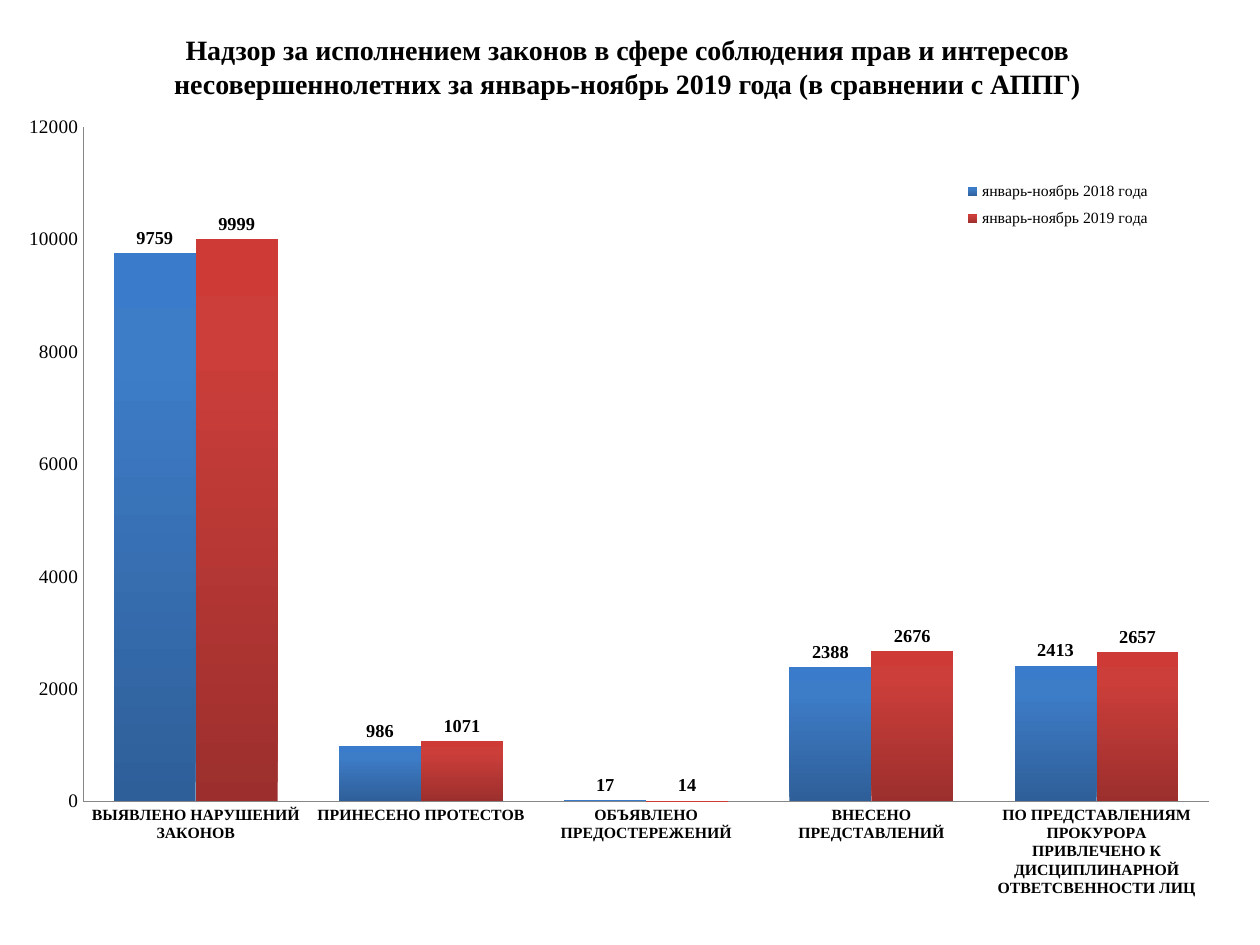
from copy import deepcopy

from lxml.etree import SubElement
from pptx import Presentation
from pptx.chart.data import CategoryChartData as Data
from pptx.dml.color import RGBColor
from pptx.enum.chart import XL_CHART_TYPE as Kind
from pptx.enum.chart import XL_LABEL_POSITION as Spot
from pptx.enum.chart import XL_LEGEND_POSITION as Side
from pptx.enum.chart import XL_TICK_MARK as Tick
from pptx.enum.text import PP_ALIGN as Align
from pptx.oxml import parse_xml
from pptx.oxml.ns import nsdecls, qn
from pptx.util import Inches, Pt

BLACK = RGBColor(0, 0, 0)
GRAY = RGBColor(0x86, 0x86, 0x86)
BLUES = [RGBColor(0x2F, 0x5F, 0x99), RGBColor(0x3D, 0x7C, 0xC7), RGBColor(0x3A, 0x7C, 0xCB)]
REDS = [RGBColor(0x9C, 0x2F, 0x2D), RGBColor(0xCB, 0x3E, 0x3A), RGBColor(0xCE, 0x3B, 0x37)]
STOPS = [0, 0.8, 1]
FACE = "Times New Roman"

TITLE = ("Надзор за исполнением законов в сфере соблюдения прав и интересов "
         "несовершеннолетних за январь-ноябрь 2019 года (в сравнении с АППГ)")
CATS = ["ВЫЯВЛЕНО НАРУШЕНИЙ ЗАКОНОВ", "ПРИНЕСЕНО ПРОТЕСТОВ",
        "ОБЪЯВЛЕНО ПРЕДОСТЕРЕЖЕНИЙ", "ВНЕСЕНО ПРЕДСТАВЛЕНИЙ",
        "ПО ПРЕДСТАВЛЕНИЯМ ПРОКУРОРА ПРИВЛЕЧЕНО К ДИСЦИПЛИНАРНОЙ ОТВЕТСВЕННОСТИ ЛИЦ"]
ROWS = [("январь-ноябрь 2018 года", [9759, 986, 17, 2388, 2413], BLUES),
        ("январь-ноябрь 2019 года", [9999, 1071, 14, 2676, 2657], REDS)]


def set_font(font, size, bold=False, face=FACE):
    font.name, font.size, font.bold = face, Pt(size), bold
    font.color.rgb = BLACK


def add_text(slide, text, box, size=16, bold=False, align=Align.LEFT):
    frame = slide.shapes.add_textbox(*map(Inches, box)).text_frame
    frame.word_wrap = True
    para = frame.paragraphs[0]
    para.alignment = align
    run = para.add_run()
    run.text = text
    set_font(run.font, size, bold)


def place(node, spot, index, inner=False):
    for old in node.findall(qn("c:layout")):
        node.remove(old)
    layout = parse_xml(f"<c:layout {nsdecls('c')}><c:manualLayout/></c:layout>")
    pairs = [("layoutTarget", "inner")] if inner else []
    pairs += [("xMode", "edge"), ("yMode", "edge"), *zip("xywh", spot)]
    for tag, val in pairs:
        SubElement(layout[0], qn(f"c:{tag}")).set("val", str(val))
    node.insert(index, layout)


def style_axis(axis, size, bold=False):
    axis.has_major_gridlines = False
    axis.major_tick_mark = axis.minor_tick_mark = Tick.NONE
    axis.format.line.color.rgb = GRAY
    set_font(axis.tick_labels.font, size, bold)


def style_bars(bars, colors):
    fill = bars.format.fill
    fill.gradient()
    fill.gradient_angle = 90
    stops = next(bars.format.fill._xPr.iter(qn("a:gsLst")))
    stops.append(deepcopy(stops[-1]))
    for stop, color, pos in zip(fill.gradient_stops, colors, STOPS):
        stop.color.rgb = color
        stop.position = pos
    labels = bars.data_labels
    labels.show_value = True
    labels.position = Spot.OUTSIDE_END
    set_font(labels.font, 10.5, True)


def add_bars(slide, box):
    data = Data()
    data.categories = CATS
    for name, vals, _ in ROWS:
        data.add_series(name, vals)
    chart = slide.shapes.add_chart(Kind.COLUMN_CLUSTERED, *map(Inches, box), data).chart
    set_font(chart.font, 10, face="Calibri")
    chart.has_title = False
    plot = chart.plots[0]
    plot.gap_width, plot.overlap, plot.vary_by_categories = 75, 0, False
    for bars, (_, _, colors) in zip(plot.series, ROWS):
        style_bars(bars, colors)
    style_axis(chart.category_axis, 9, True)
    axis = chart.value_axis
    style_axis(axis, 11)
    axis.minimum_scale, axis.maximum_scale, axis.major_unit = 0, 12000, 2000
    chart.has_legend = True
    legend = chart.legend
    legend.position = Side.BOTTOM
    legend.include_in_layout = False
    set_font(legend.font, 9)
    place(legend._element, (0.77, 0.09, 0.17, 0.08), 1)
    area = next(chart._chartSpace.iter(qn("c:plotArea")))
    place(area, (0.05, 0.03, 0.93, 0.86), 0, inner=True)


def main():
    deck = Presentation()
    deck.slide_width, deck.slide_height = Inches(10), Inches(7.5)
    slide = deck.slides.add_slide(deck.slide_layouts[6])
    add_text(slide, TITLE, (0.48, 0.21, 9, 0.61), bold=True, align=Align.CENTER)
    add_bars(slide, (0.18, 0.82, 9.61, 6.3))
    deck.save("out.pptx")


if __name__ == "__main__":
    main()
